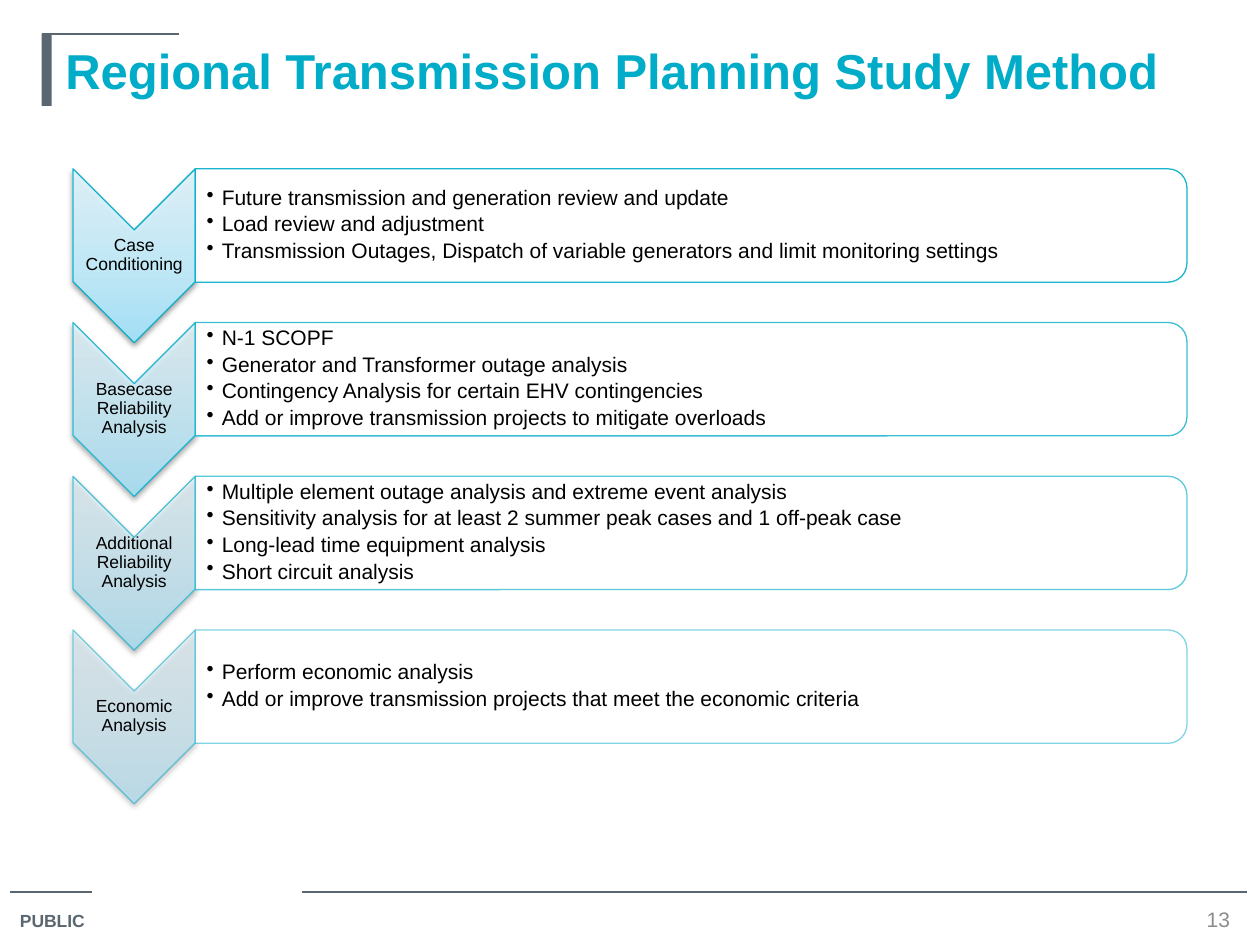
from lxml import etree
from pptx import Presentation
from pptx import util as u
from pptx.dml.color import RGBColor
from pptx.enum import shapes, text
from pptx.oxml import parse_xml
from pptx.oxml.ns import nsdecls, qn

COLORS = {
    "teal": "00ACC8", "slate": "5B6770", "gray": "8C8C8C", "black": "000000",
    "white": "FFFFFF", "deep": "A3E6FF", "middle": "BEEDFF", "pale": "E6F8FF",
}
STEPS = [
    ("Case Conditioning", [
        "Future transmission and generation review and update",
        "Load review and adjustment",
        "Transmission Outages, Dispatch of variable generators and limit monitoring settings"]),
    ("Basecase Reliability Analysis", [
        "N-1 SCOPF",
        "Generator and Transformer outage analysis",
        "Contingency Analysis for certain EHV contingencies",
        "Add or improve transmission projects to mitigate overloads"]),
    ("Additional Reliability Analysis", [
        "Multiple element outage analysis and extreme event analysis",
        "Sensitivity analysis for at least 2 summer peak cases and 1 off-peak case",
        "Long-lead time equipment analysis",
        "Short circuit analysis"]),
    ("Economic Analysis", [
        "Perform economic analysis",
        "Add or improve transmission projects that meet the economic criteria"]),
]

prs = Presentation()
prs.slide_width, prs.slide_height = u.Inches(10), u.Inches(7.5)
slide = prs.slides.add_slide(prs.slide_layouts[6])


def add_text(box, lines, size, color, bold=False, align=text.PP_ALIGN.LEFT,
             anchor=text.MSO_ANCHOR.TOP, insets=(0.1, 0.05, 0.1, 0.05),
             spacing=None, after=0, bullet=False):
    frame = slide.shapes.add_textbox(*map(u.Inches, box)).text_frame
    frame.word_wrap = True
    frame.vertical_anchor = anchor
    (frame.margin_left, frame.margin_top,
     frame.margin_right, frame.margin_bottom) = map(u.Inches, insets)
    for number, line in enumerate(lines):
        para = frame.add_paragraph() if number else frame.paragraphs[0]
        para.alignment, para.line_spacing = align, spacing
        para.space_after = u.Pt(after)
        if bullet:
            props = para._p.get_or_add_pPr()
            props.set("marL", str(u.Inches(0.12)))
            props.set("indent", str(-u.Inches(0.12)))
            etree.SubElement(props, qn("a:buChar")).set("char", "•")
        run = para.add_run()
        run.text = line
        run.font.name, run.font.size, run.font.bold = "Arial", u.Pt(size), bold
        run.font.color.rgb = RGBColor.from_string(COLORS[color])


def add_turned(kind, left, top, width, height, opacity):
    """Place a shape turned a quarter clockwise so it covers the given box."""
    shape = slide.shapes.add_shape(
        kind, u.Inches(left + (width - height) / 2),
        u.Inches(top + (height - width) / 2), u.Inches(height), u.Inches(width))
    shape.rotation = 90
    shape.shadow.inherit = False
    shape.fill.solid()
    shape.fill.fore_color.rgb = RGBColor.from_string(COLORS["white"])
    shape.line.color.rgb = RGBColor.from_string(COLORS["teal"])
    shape.line.width = u.Pt(0.75)
    for part, percent in (("a:solidFill", 90), ("a:ln", opacity)):
        color = next(shape._element.spPr.find(qn(part)).iter(qn("a:srgbClr")))
        etree.SubElement(color, qn("a:alpha")).set("val", str(round(percent * 1000)))
    return shape


# Footer rules and the rule over the title
for start, end, y in ((0.08, 0.73, 7.08), (2.4, 9.9, 7.08), (0.33, 1.42, 0.27)):
    rule = slide.shapes.add_connector(
        shapes.MSO_CONNECTOR.STRAIGHT, *map(u.Inches, (start, y, end, y)))
    rule.line.color.rgb = RGBColor.from_string(COLORS["slate"])
    rule.line.width = u.Pt(0.75)
    etree.SubElement(rule._element.spPr, qn("a:effectLst"))

# Title with its accent bar
accent = slide.shapes.add_shape(
    shapes.MSO_SHAPE.RECTANGLE, *map(u.Inches, (0.33, 0.27, 0.08, 0.57)))
accent.shadow.inherit = False
accent.fill.solid()
accent.fill.fore_color.rgb = RGBColor.from_string(COLORS["slate"])
accent.line.fill.background()
add_text((0.42, 0.27, 9.25, 1.25), ["Regional Transmission Planning Study Method"],
         28, "teal", bold=True)

# Footer text
add_text((0.06, 7.17, 0.77, 0.28), ["PUBLIC"], 10, "slate", bold=True)
add_text((9.42, 7.18, 0.5, 0.23), ["13"], 12, "gray",
         align=text.PP_ALIGN.CENTER, anchor=text.MSO_ANCHOR.MIDDLE)

# Study steps: one chevron and one detail panel per row
FIRST_ROW, ROW_PITCH = 1.34, 1.22
LEFT, CHEVRON_W, CHEVRON_H = 0.58, 0.97, 1.38
PANEL_LEFT, PANEL_W, PANEL_H = LEFT + CHEVRON_W, 7.87, 0.9
for row, (step, details) in enumerate(STEPS):
    top = FIRST_ROW + row * ROW_PITCH
    opacity = 90 - row * 40 / (len(STEPS) - 1)

    chevron = add_turned(shapes.MSO_SHAPE.CHEVRON, LEFT, top, CHEVRON_W, CHEVRON_H, opacity)
    stops = "".join(
        f'<a:gs pos="{place * 1000}"><a:srgbClr val="{COLORS[tone]}">'
        f'<a:alpha val="{round(opacity * 1000)}"/></a:srgbClr></a:gs>'
        for place, tone in ((0, "deep"), (35, "middle"), (100, "pale")))
    props = chevron._element.spPr
    props.replace(props.find(qn("a:solidFill")), parse_xml(
        f'<a:gradFill {nsdecls("a")} rotWithShape="0"><a:gsLst>{stops}</a:gsLst>'
        '<a:lin ang="16200000" scaled="0"/></a:gradFill>'))
    props.find(qn("a:effectLst")).append(parse_xml(
        f'<a:outerShdw {nsdecls("a")} blurRad="40000" dist="20000" dir="5400000" '
        f'rotWithShape="0"><a:srgbClr val="{COLORS["black"]}"><a:alpha val="38000"/>'
        '</a:srgbClr></a:outerShdw>'))
    add_text((LEFT, top + 0.48, CHEVRON_W, 0.41), [step], 10, "black",
             align=text.PP_ALIGN.CENTER, anchor=text.MSO_ANCHOR.MIDDLE,
             insets=(0.01,) * 4, spacing=0.9)

    add_turned(shapes.MSO_SHAPE.ROUND_2_SAME_RECTANGLE,
               PANEL_LEFT, top, PANEL_W, PANEL_H, opacity)
    add_text((PANEL_LEFT, top + 0.04, 7.82, 0.81), details, 12, "black",
             anchor=text.MSO_ANCHOR.MIDDLE, insets=(0.09, 0.01, 0.01, 0.01),
             spacing=0.9, after=2.2, bullet=True)

prs.save("out.pptx")
